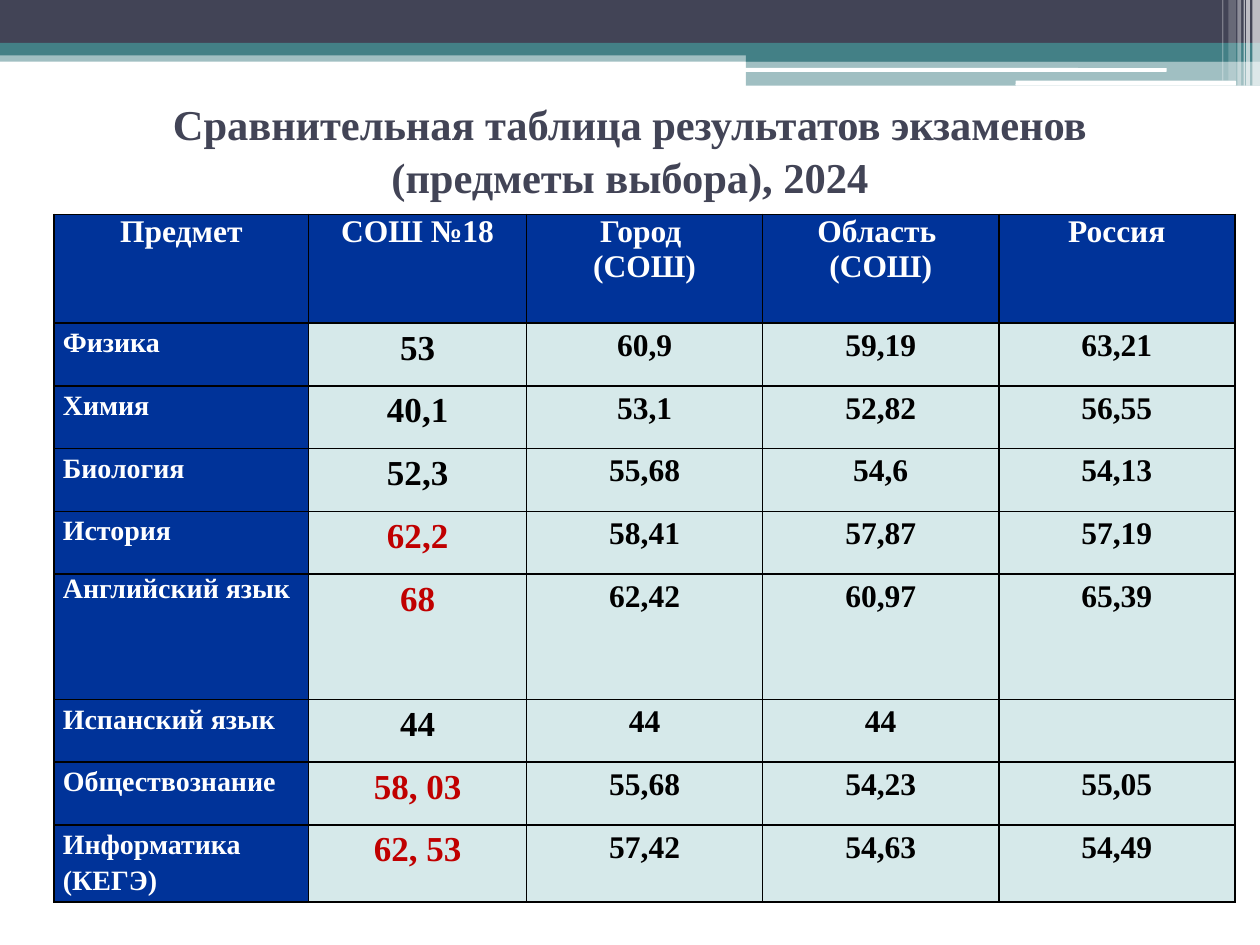
from lxml.etree import SubElement
from pptx import Presentation
from pptx.dml.color import RGBColor
from pptx.enum.shapes import MSO_SHAPE
from pptx.enum.text import MSO_ANCHOR, PP_ALIGN
from pptx.oxml.ns import qn
from pptx.util import Inches, Pt

WIDTH, HEIGHT = Inches(10), Inches(7.5)
FONT = "Times New Roman"
WHITE = RGBColor(0xFF, 0xFF, 0xFF)
BLACK = RGBColor(0x00, 0x00, 0x00)
SLATE = RGBColor(0x42, 0x44, 0x56)
TEAL = RGBColor(0x43, 0x80, 0x86)
NAVY = RGBColor(0x00, 0x33, 0x99)
PALE = RGBColor(0xD6, 0xE9, 0xEA)
RED = RGBColor(0xC0, 0x00, 0x00)

BANDS = [
    (0, 5.33, 100, 1.2, TEAL, 50),
    (0, 0, 100, 4.53, SLATE, 100),
    (0, 4.53, 100, 1.33, TEAL, 100),
    (59.2, 5.2, 40.8, 1.33, TEAL, 100),
    (59.2, 6.4, 40.8, 2.67, TEAL, 50),
]
SLOTS = [(59.1, 7.2, 33.5, 0.4), (80.6, 8.53, 17.5, 0.53)]
STRIPES = [
    (99.4, 0.6, 9.07, 65),
    (98.9, 0.3, 9.07, 65),
    (98.7, 0.1, 9.07, 60),
    (98.2, 0.3, 9.07, 40),
    (97.5, 0.6, 8.53, 20),
    (97, 0.1, 8.53, 30),
]

TITLE = "Сравнительная таблица результатов экзаменов (предметы выбора), 2024"
HEADER = ["Предмет", "СОШ №18", "Город \n(СОШ)", "Область \n(СОШ)", "Россия"]
RESULTS = [
    ("Физика", "53", "60,9", "59,19", "63,21"),
    ("Химия", "40,1", "53,1", "52,82", "56,55"),
    ("Биология", "52,3", "55,68", "54,6", "54,13"),
    ("История", "62,2", "58,41", "57,87", "57,19"),
    ("Английский язык", "68", "62,42", "60,97", "65,39"),
    ("Испанский язык", "44", "44", "44", ""),
    ("Обществознание", "58, 03", "55,68", "54,23", "55,05"),
    ("Информатика (КЕГЭ)", "62, 53", "57,42", "54,63", "54,49"),
]
HIGHLIGHTED = {"История", "Английский язык", "Обществознание", "Информатика (КЕГЭ)"}
TALL_SUBJECT = "Английский язык"
COLUMN_SHARES = [20.2, 17.3] + [18.74] * 3
HEADER_SHARE, ROW_SHARE = 11.53, 6.64


def across(percent):
    """Return a percentage of the slide's width."""
    return round(WIDTH * percent / 100)


def down(percent):
    """Return a percentage of the slide's height."""
    return round(HEIGHT * percent / 100)


def area(x, y, w, h):
    """Return a rectangle given in percentages of the slide."""
    return across(x), down(y), across(w), down(h)


def write(tf, text, size=18, color=WHITE, align=PP_ALIGN.CENTER, spacing=None, after=None):
    """Fill a text frame with bold paragraphs, one for each line of text."""
    tf.word_wrap = True
    for i, line in enumerate(text.split("\n")):
        p = tf.add_paragraph() if i else tf.paragraphs[0]
        p.alignment, p.line_spacing, p.space_after = align, spacing, after
        r = p.add_run()
        r.text = line
        r.font.name, r.font.size, r.font.bold = FONT, Pt(size), True
        r.font.color.rgb = color


def add_block(s, x, y, w, h, color, opacity=100, kind=MSO_SHAPE.RECTANGLE):
    """Add a borderless shape with an opacity in percent."""
    sp = s.shapes.add_shape(kind, *area(x, y, w, h))
    sp.shadow.inherit = False
    sp.line.fill.background()
    sp.fill.solid()
    sp.fill.fore_color.rgb = color
    if opacity < 100:
        tint = sp.fill._xPr.find(qn("a:solidFill"))[0]
        SubElement(tint, qn("a:alpha"), val=str(opacity * 1000))


def add_banner(s):
    """Draw the layered bands at the top of the slide."""
    for band in BANDS:
        add_block(s, *band)
    for slot in SLOTS:
        add_block(s, *slot, WHITE, kind=MSO_SHAPE.ROUNDED_RECTANGLE)
    for x, w, h, opacity in STRIPES:
        add_block(s, x, 0, w, h, WHITE, opacity)


def add_title(s):
    """Add the centred heading, which grows upward from its base."""
    tf = s.shapes.add_textbox(*area(5, 16.67, 90, 6)).text_frame
    tf.vertical_anchor = MSO_ANCHOR.BOTTOM
    tf.margin_bottom = Inches(0.1)
    write(tf, TITLE, size=24.3, color=SLATE, spacing=1.04)


def style_cell(cell, fill):
    """Set the borders, margins and fill of a cell."""
    tc_pr = cell._tc.get_or_add_tcPr()
    for side in ("a:lnL", "a:lnR", "a:lnT", "a:lnB"):
        ln = SubElement(tc_pr, qn(side), w=str(Pt(1)))
        SubElement(SubElement(ln, qn("a:solidFill")), qn("a:srgbClr"), val=str(BLACK))
    cell.margin_left = cell.margin_right = Inches(0.07)
    cell.margin_top = cell.margin_bottom = 0
    cell.fill.solid()
    cell.fill.fore_color.rgb = fill


def result_format(subject, column):
    """Return the text format of a result row's cell."""
    body = dict(spacing=1.15, after=Pt(10))
    if column == 0:
        base = {} if subject == TALL_SUBJECT else body
        return dict(base, size=16, align=PP_ALIGN.LEFT)
    if column == 1:
        return dict(body, size=20, color=RED if subject in HIGHLIGHTED else BLACK)
    return dict(body, color=BLACK)


def add_results(s):
    """Add the table of exam results."""
    shares = [HEADER_SHARE]
    shares += [ROW_SHARE * (2 if row[0] == TALL_SUBJECT else 1) for row in RESULTS]
    frame = area(4.3, 22.67, sum(COLUMN_SHARES), sum(shares))
    table = s.shapes.add_table(len(shares), len(COLUMN_SHARES), *frame).table
    table.horz_banding = False
    for column, share in zip(table.columns, COLUMN_SHARES):
        column.width = across(share)
    for row, share in zip(table.rows, shares):
        row.height = down(share)
    for i, values in enumerate([HEADER] + RESULTS):
        for j, value in enumerate(values):
            cell = table.cell(i, j)
            style_cell(cell, PALE if i and j else NAVY)
            if value:
                write(cell.text_frame, value, **(result_format(values[0], j) if i else {}))


def main():
    """Build the slide and save it."""
    prs = Presentation()
    prs.slide_width, prs.slide_height = WIDTH, HEIGHT
    s = prs.slides.add_slide(prs.slide_layouts[6])
    add_banner(s)
    add_title(s)
    add_results(s)
    prs.save("out.pptx")


if __name__ == "__main__":
    main()
